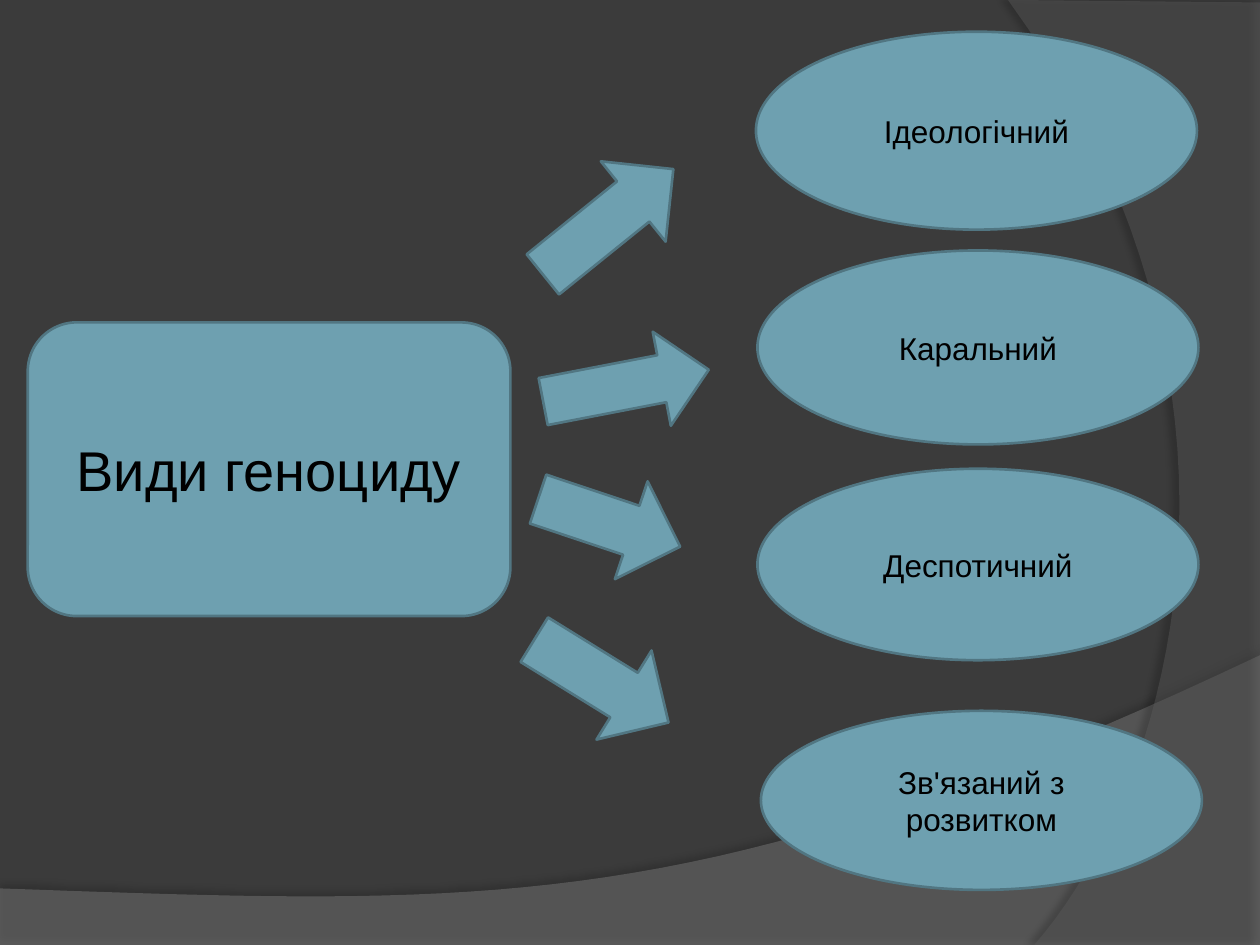
from lxml import etree
from pptx import Presentation
from pptx.dml.color import RGBColor
from pptx.enum.shapes import MSO_SHAPE
from pptx.enum.text import MSO_ANCHOR, PP_ALIGN
from pptx.oxml.ns import qn
from pptx.util import Cm, Pt

ROUNDED = MSO_SHAPE.ROUNDED_RECTANGLE
OVAL = MSO_SHAPE.OVAL
RIGHT_ARROW = MSO_SHAPE.RIGHT_ARROW
DOWN_ARROW = MSO_SHAPE.DOWN_ARROW
MIDDLE = MSO_ANCHOR.MIDDLE
CENTER = PP_ALIGN.CENTER
CURVE_STEPS = 40


def set_color(target, color):
    if hasattr(target, "solid"):
        target.solid()
        target = target.fore_color
    target.rgb = RGBColor.from_string(color)


def write_text(shape, text, size=18, font="Arial", color="000000"):
    frame = shape.text_frame
    frame.word_wrap = True
    frame.vertical_anchor = MIDDLE
    paragraph = frame.paragraphs[0]
    paragraph.alignment = CENTER
    run = paragraph.add_run()
    run.text = text
    run.font.size = Pt(size)
    run.font.name = font
    set_color(run.font.color, color)


presentation = Presentation()
presentation.slide_width = Cm(25.4)
presentation.slide_height = Cm(19.05)
slide = presentation.slides.add_slide(presentation.slide_layouts[6])
set_color(slide.background.fill, "3B3B3B")

waves = [
    ([(0, 17.91), (0, 19.05), (25.4, 19.05), (25.4, 13.21)],
     [(14.2, 18.52), (9.93, 18.26), (0, 17.91)], "7F7F7F", 45, 35, 3.5, 270),
    ([(25.4, 0.05), (25.4, 19.05), (20.85, 19.05)],
     [(23.75, 15.72), (25.86, 7.62), (20.32, 0)], "5E5E5E", 40, 45, 4, 180),
]
for corners, controls, color, opacity, shadow_opacity, distance, direction in waves:
    points = list(corners)
    curve = [corners[-1]] + controls
    for step in range(1, CURVE_STEPS + 1):
        t = step / CURVE_STEPS
        weights = [(1 - t) ** 3, 3 * t * (1 - t) ** 2, 3 * t ** 2 * (1 - t), t ** 3]
        points.append(tuple(sum(w * point[axis] for w, point in zip(weights, curve))
                            for axis in (0, 1)))
    vertices = [(Cm(x), Cm(y)) for x, y in points]
    builder = slide.shapes.build_freeform(*vertices[0])
    builder.add_line_segments(vertices[1:], close=True)
    wave = builder.convert_to_shape()
    set_color(wave.fill, color)
    wave.line.fill.background()
    wave.shadow.inherit = False
    properties = wave.element.spPr
    fill_color = properties.find(qn("a:solidFill")).find(qn("a:srgbClr"))
    etree.SubElement(fill_color, qn("a:alpha"), val=str(opacity * 1000))
    shadow = etree.SubElement(
        properties.find(qn("a:effectLst")), qn("a:outerShdw"), blurRad=str(Pt(4)),
        dist=str(Pt(distance)), dir=str(direction * 60000), rotWithShape="0")
    shadow_color = etree.SubElement(shadow, qn("a:srgbClr"), val="000000")
    etree.SubElement(shadow_color, qn("a:alpha"), val=str(shadow_opacity * 1000))

diagram = [
    (ROUNDED, 0.56, 6.5, 9.73, 5.92, 0, "Види геноциду", 32),
    (RIGHT_ARROW, 10.57, 3.43, 3.38, 2.08, 321.1, "", 18),
    (OVAL, 15.24, 0.64, 8.89, 3.99, 0, "Ідеологічний", 18),
    (RIGHT_ARROW, 10.92, 6.81, 3.4, 1.93, 349.1, "", 18),
    (OVAL, 15.27, 5.05, 8.89, 3.91, 0, "Каральний", 18),
    (RIGHT_ARROW, 10.77, 9.5, 3.02, 2.08, 18.5, "", 18),
    (OVAL, 15.27, 9.45, 8.89, 3.86, 0, "Деспотичний", 18),
    (DOWN_ARROW, 11.07, 12.14, 2.11, 3.18, 301.7, "", 18),
    (OVAL, 15.34, 14.33, 8.89, 3.61, 0, "Зв'язаний з розвитком", 18),
]
for kind, left, top, width, height, rotation, text, size in diagram:
    shape = slide.shapes.add_shape(kind, Cm(left), Cm(top), Cm(width), Cm(height))
    shape.rotation = rotation
    set_color(shape.fill, "6EA0B0")
    set_color(shape.line.fill, "517682")
    shape.line.width = Pt(1.5)
    shape.shadow.inherit = False
    if text:
        write_text(shape, text, size=size)

presentation.save("out.pptx")
